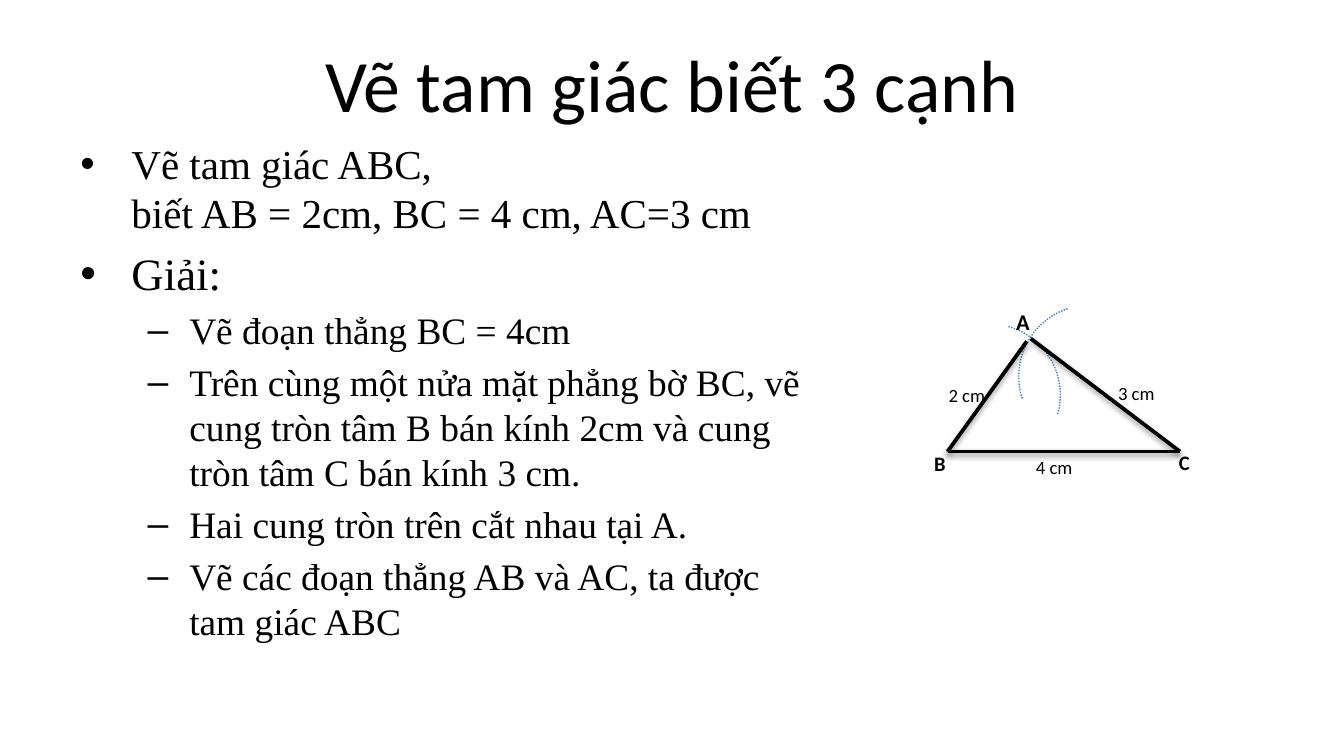
from lxml import etree
from pptx import Presentation
from pptx import util as u
from pptx.dml.color import RGBColor
from pptx.enum import dml, shapes, text
from pptx.oxml import ns


def color(value):
    """Turn a hex string into a colour."""
    return RGBColor.from_string(value)


def add_xml(parent, tag, **attributes):
    """Append a DrawingML child and return it."""
    return etree.SubElement(parent, ns.qn(tag), attributes)


class Lesson:
    """Hold the style and the current slide."""

    heading_font = "Calibri"
    body_font = "Times New Roman"
    ink = "000000"
    arc_ink = "4B7EBC"
    levels = [("•", 0.38, 0.38), ("–", 0.81, 0.31)]

    def __init__(self, deck):
        """Add a title-only slide to the deck."""
        self.page = deck.slides.add_slide(deck.slide_layouts[5])

    def style(self, para, size, name, bold=False):
        """Set the font of a paragraph."""
        font = para.font
        font.size, font.name, font.bold = u.Pt(size), name, bold
        font.color.rgb = color(self.ink)

    def title(self, words, left, top, width, height):
        """Place and fill the title."""
        box = self.page.shapes.title
        box.left, box.top = u.Inches(left), u.Inches(top)
        box.width, box.height = u.Inches(width), u.Inches(height)
        frame = box.text_frame
        frame.text = words
        frame.vertical_anchor = text.MSO_ANCHOR.MIDDLE
        para = frame.paragraphs[0]
        para.alignment = text.PP_ALIGN.CENTER
        self.style(para, 39.6, self.heading_font)

    def bullets(self, items, left, top, width, height):
        """Add a two-level bulleted list."""
        box = self.page.shapes.add_textbox(*map(u.Inches, (left, top, width, height)))
        frame = box.text_frame
        frame.word_wrap = True
        for index, (level, size, words) in enumerate(items):
            para = frame.paragraphs[0] if index == 0 else frame.add_paragraph()
            para.text, para.level = words, level
            para.space_before = u.Pt(size * 0.2)
            self.style(para, size, self.body_font)
            mark, margin, hang = self.levels[level]
            props = para._p.get_or_add_pPr()
            props.set("marL", str(u.Inches(margin)))
            props.set("indent", str(-u.Inches(hang)))
            bullet_font = props.makeelement(ns.qn("a:buFont"), {"typeface": "Arial"})
            bullet = props.makeelement(ns.qn("a:buChar"), {"char": mark})
            props.find(ns.qn("a:spcBef")).addnext(bullet_font)
            bullet_font.addnext(bullet)

    def arc(self, left, top, size, rotation):
        """Add a dotted compass arc."""
        box = self.page.shapes.add_shape(
            shapes.MSO_SHAPE.ARC, *map(u.Inches, (left, top, size, size)))
        box.rotation = rotation
        box.shadow.inherit = False
        box.fill.background()
        box.line.color.rgb = color(self.arc_ink)
        box.line.width = u.Pt(0.75)
        box.line.dash_style = dml.MSO_LINE.ROUND_DOT

    def side(self, parent, start, end):
        """Add a triangle side with a soft shadow."""
        line = parent.shapes.add_connector(
            shapes.MSO_CONNECTOR.STRAIGHT, *map(u.Inches, start + end))
        line.line.color.rgb = color(self.ink)
        line.line.width = u.Pt(2)
        effects = add_xml(line._element.spPr, "a:effectLst")
        shadow = add_xml(effects, "a:outerShdw", blurRad=str(u.Pt(3.1)),
                         dist=str(u.Pt(1.6)), dir="5400000", rotWithShape="0")
        tint = add_xml(shadow, "a:srgbClr", val=self.ink)
        add_xml(tint, "a:alpha", val="38000")

    def label(self, parent, words, left, top, width, height, size, bold=False):
        """Add a label that grows with its text."""
        box = parent.shapes.add_textbox(*map(u.Inches, (left, top, width, height)))
        frame = box.text_frame
        frame.text = words
        frame.word_wrap = False
        frame.auto_size = text.MSO_AUTO_SIZE.SHAPE_TO_FIT_TEXT
        self.style(frame.paragraphs[0], size, self.heading_font, bold)


def main():
    """Build the geometry lesson."""
    deck = Presentation()
    deck.slide_width = u.Inches(10)
    deck.slide_height = u.Inches(10 * 9 / 16)
    lesson = Lesson(deck)
    page = lesson.page
    lesson.title("Vẽ tam giác biết 3 cạnh", 0.5, 0.23, 9, 0.78)
    lesson.bullets([
        (0, 22, "Vẽ tam giác ABC, \vbiết AB = 2cm, BC = 4 cm, AC=3 cm"),
        (0, 24, "Giải:"),
        (1, 20, "Vẽ đoạn thẳng BC = 4cm"),
        (1, 20, "Trên cùng một nửa mặt phẳng bờ BC, vẽ cung tròn tâm B "
                "bán kính 2cm và cung tròn tâm C bán kính 3 cm."),
        (1, 20, "Hai cung tròn trên cắt nhau tại A."),
        (1, 20, "Vẽ các đoạn thẳng AB và AC, ta được tam giác ABC"),
    ], 0.5, 0.98, 5.68, 4.43)

    lesson.arc(6.83, 2.41, 1.06, 15.8)
    lesson.arc(7.58, 2.27, 1.06, 252)

    corner_b, corner_c = (7.05, 3.36), (8.78, 3.36)
    base = page.shapes.add_group_shape()
    lesson.side(base, corner_b, corner_c)
    lesson.label(base, "B", 6.89, 3.31, 0.16, 0.29, 11, True)
    lesson.label(base, "C", 8.71, 3.3, 0.16, 0.29, 11, True)
    lesson.label(page, "A", 7.56, 2.24, 0.08, 0.3, 12, True)
    lesson.side(page, (7.64, 2.54), corner_b)
    lesson.side(page, (7.67, 2.52), corner_c)
    for words, left, top in [("4 cm", 7.61, 3.34), ("2 cm", 6.96, 2.81),
                             ("3 cm", 8.22, 2.79)]:
        lesson.label(page, words, left, top, 0.49, 0.28, 10)
    deck.save("out.pptx")


if __name__ == "__main__":
    main()
